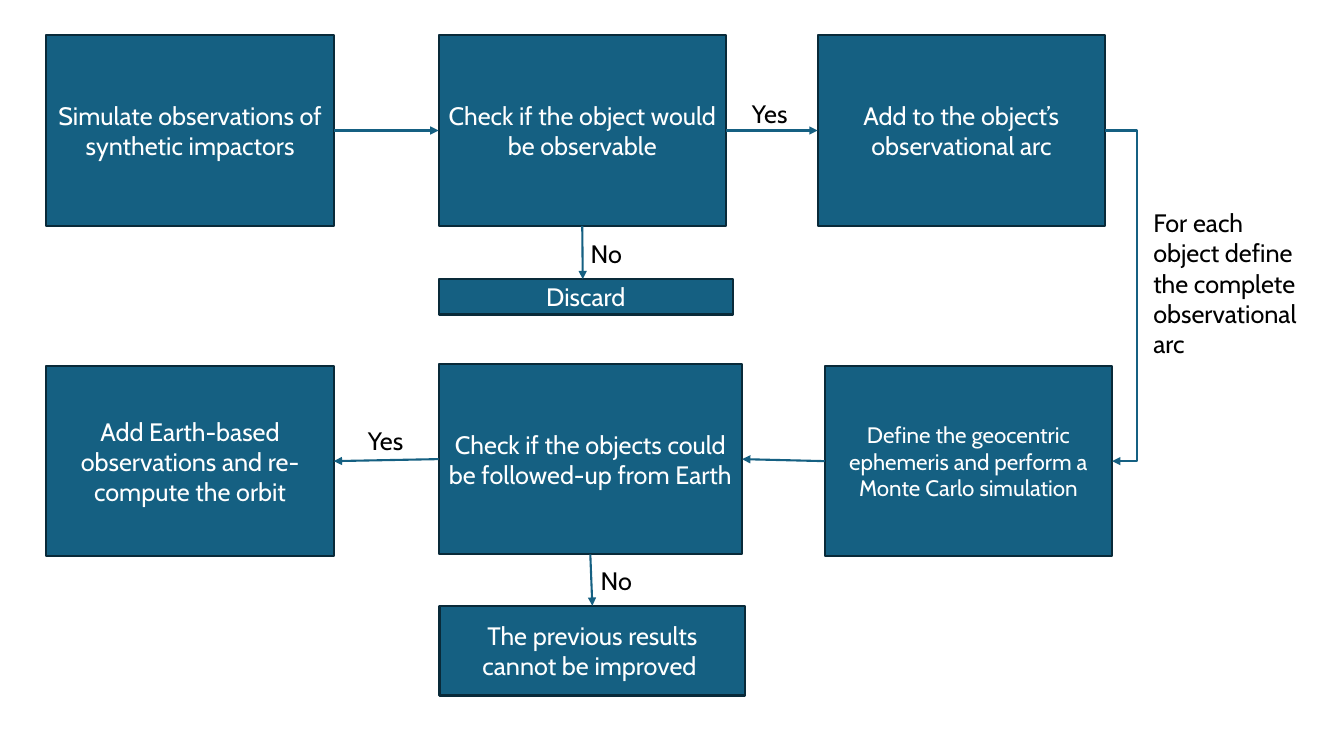
"""Build a flowchart slide on observing synthetic impactors and improving their orbits."""
from lxml import etree
from pptx import Presentation
from pptx import util as u
from pptx.dml.color import RGBColor
from pptx.enum import shapes, text
from pptx.oxml.ns import qn

COLORS = {"box": "156082", "border": "092A39", "arrow": "156082", "box_text": "FFFFFF", "label": "000000"}
FONT = "Cabin"
TOP, RIGHT, BOTTOM, LEFT = 0, 3, 2, 1
WIDTH, HEIGHT = 2.85, 1.89


def color(name):
    return RGBColor.from_string(COLORS[name])


def write(shape, wording, size, color_name, frame_format, alignment):
    frame = shape.text_frame
    for attribute, value in frame_format.items():
        setattr(frame, attribute, value)
    paragraph = frame.paragraphs[0]
    paragraph.alignment = alignment
    run = paragraph.add_run()
    run.text = wording
    for attribute, value in {"name": FONT, "size": u.Pt(size)}.items():
        setattr(run.font, attribute, value)
    run.font.color.rgb = color(color_name)


presentation = Presentation()
presentation.slide_width = u.Inches(13.33)
presentation.slide_height = u.Inches(7.5)
slide = presentation.slides.add_slide(presentation.slide_layouts[6])

box_format = {"word_wrap": True, "vertical_anchor": text.MSO_ANCHOR.MIDDLE}
label_format = {"word_wrap": True, "auto_size": text.MSO_AUTO_SIZE.SHAPE_TO_FIT_TEXT}

steps = {
    "simulate": (0.46, 0.35, WIDTH, HEIGHT, 18, "Simulate observations of synthetic impactors"),
    "observable": (4.35, 0.35, WIDTH, HEIGHT, 18, "Check if the object would be observable"),
    "discard": (4.35, 2.77, 2.92, 0.35, 18, "Discard"),
    "arc": (8.11, 0.35, WIDTH, HEIGHT, 18, "Add to the object’s observational arc"),
    "ephemeris": (8.18, 3.63, WIDTH, HEIGHT, 16,
                  "Define the geocentric ephemeris and perform a Monte Carlo simulation"),
    "follow_up": (4.35, 3.61, 3.01, HEIGHT, 18, "Check if the objects could be followed-up from Earth"),
    "unimproved": (4.36, 6.01, 3.03, 0.89, 18, "The previous results cannot be improved "),
    "recompute": (0.46, 3.63, WIDTH, HEIGHT, 18, "Add Earth-based observations and re-compute the orbit"),
}
boxes = {}
for name, (left, top, width, height, size, wording) in steps.items():
    box = slide.shapes.add_shape(shapes.MSO_SHAPE.RECTANGLE, *map(u.Inches, (left, top, width, height)))
    box.shadow.inherit = False
    box.fill.solid()
    box.fill.fore_color.rgb = color("box")
    box.line.color.rgb = color("border")
    box.line.width = u.Pt(1.5)
    write(box, wording, size, "box_text", box_format, text.PP_ALIGN.CENTER)
    boxes[name] = box

straight, elbow = shapes.MSO_CONNECTOR.STRAIGHT, shapes.MSO_CONNECTOR.ELBOW
arrows = [
    (straight, "simulate", RIGHT, "observable", LEFT),
    (straight, "observable", RIGHT, "arc", LEFT),
    (straight, "observable", BOTTOM, None, TOP),
    (elbow, "arc", RIGHT, "ephemeris", RIGHT),
    (straight, "ephemeris", LEFT, "follow_up", RIGHT),
    (straight, "follow_up", LEFT, "recompute", RIGHT),
    (straight, "follow_up", BOTTOM, "unimproved", TOP),
]
for kind, source, source_side, target, target_side in arrows:
    arrow = slide.shapes.add_connector(kind, *map(u.Inches, (5.78, 2.24, 5.78, 2.77)))
    arrow.begin_connect(boxes[source], source_side)
    if target:
        arrow.end_connect(boxes[target], target_side)
    arrow.line.color.rgb = color("arrow")
    arrow.line.width = u.Pt(1.5)
    properties = arrow._element.spPr
    etree.SubElement(properties.find(qn("a:ln")), qn("a:tailEnd"), type="triangle")
    etree.SubElement(properties, qn("a:effectLst"))
    if kind == elbow:
        bend = round((u.Inches(11.28) - arrow.begin_x) / (arrow.end_x - arrow.begin_x) * 100000)
        guides = properties.find(qn("a:prstGeom")).find(qn("a:avLst"))
        etree.SubElement(guides, qn("a:gd"), name="adj1", fmla=f"val {bend}")

labels = [
    (7.36, 0.93, 0.68, 0.4, "Yes"),
    (5.76, 2.32, 0.61, 0.4, "No"),
    (11.34, 2.01, 1.68, 1.62, "For each object define the complete observational arc"),
    (5.86, 5.56, 0.78, 0.4, "No"),
    (3.55, 4.17, 0.74, 0.4, "Yes"),
]
for left, top, width, height, wording in labels:
    label = slide.shapes.add_textbox(*map(u.Inches, (left, top, width, height)))
    write(label, wording, 18, "label", label_format, text.PP_ALIGN.LEFT)

presentation.save("out.pptx")
